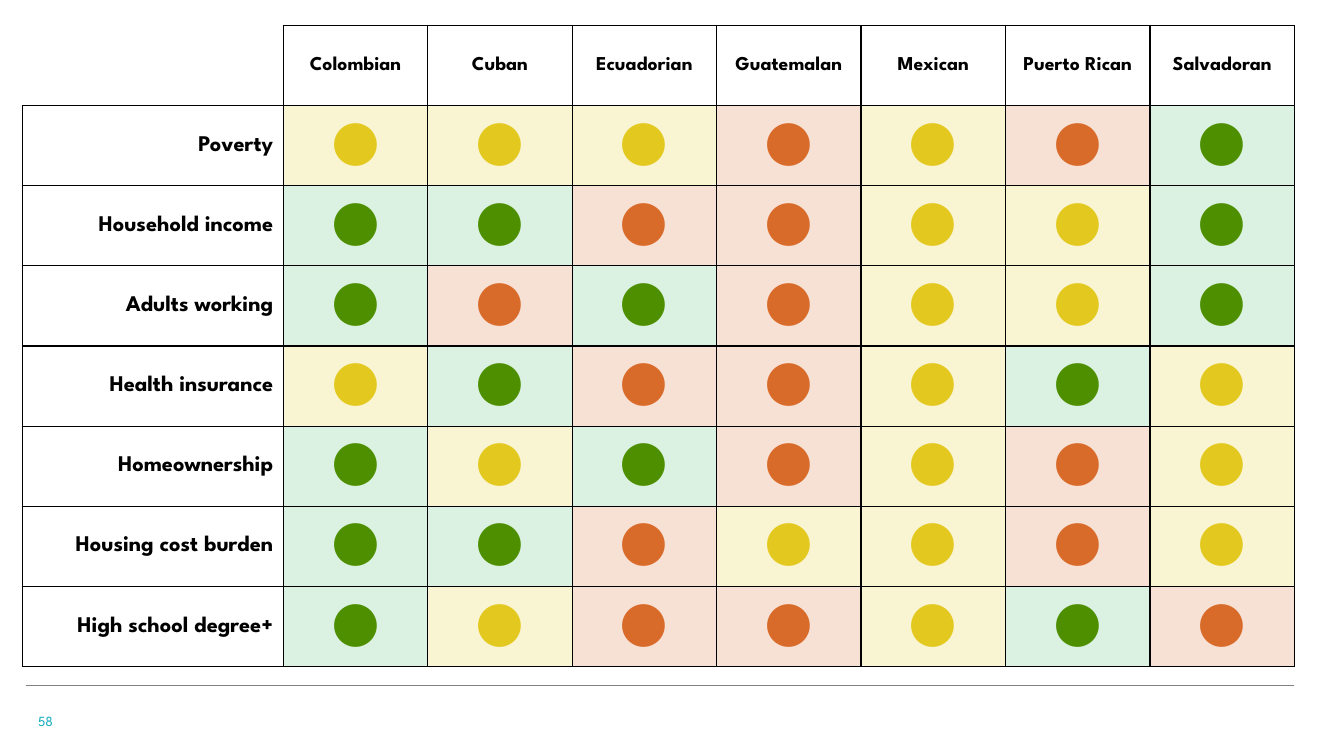
import dataclasses
import typing

import lxml.etree
import pptx
import pptx.dml.color
import pptx.enum.shapes
import pptx.enum.text
import pptx.oxml.ns
import pptx.util
from pptx.util import Cm

ALIGN = pptx.enum.text.PP_ALIGN
MIDDLE = pptx.enum.text.MSO_ANCHOR.MIDDLE


@dataclasses.dataclass(frozen=True)
class Theme:
    font: str = "League Spartan"
    ink: str = "000000"
    rule: str = "808080"
    page_number: str = "0FACBD"
    number_size: float = 10
    group_size: float = 14
    measure_size: float = 16
    dot_size: float = 40
    border_width: float = 1
    rule_width: float = 0.5


class Rating(typing.NamedTuple):
    dot: str
    fill: str


class Measure(typing.NamedTuple):
    name: str
    ratings: str


THEME = Theme()
RATINGS = {
    "G": Rating("4E8F00", "DBF1E2"),
    "Y": Rating("E3C91F", "F9F4D2"),
    "R": Rating("D96B2A", "F7E1D4"),
}
GROUPS = ["Colombian", "Cuban", "Ecuadorian", "Guatemalan", "Mexican",
          "Puerto Rican", "Salvadoran"]
MEASURES = [
    Measure("Poverty", "YYYRYRG"),
    Measure("Household income", "GGRRYYG"),
    Measure("Adults working", "GRGRYYG"),
    Measure("Health insurance", "YGRRYGY"),
    Measure("Homeownership", "GYGRYRY"),
    Measure("Housing cost burden", "GGRYYRY"),
    Measure("High school degree+", "GYRRYGR"),
]
MEASURE_WIDTH, GROUP_WIDTH, ROW_HEIGHT = Cm(6.58), Cm(3.64), Cm(2.02)


def rgb(value: str) -> pptx.dml.color.RGBColor:
    return pptx.dml.color.RGBColor.from_string(value)


def write(frame, text: str, size: float, color: str, bold: bool, align) -> None:
    para = frame.paragraphs[0]
    para.text = text
    para.alignment = align
    para.font.name = THEME.font
    para.font.size = pptx.util.Pt(size)
    para.font.bold = bold
    para.font.color.rgb = rgb(color)


def format_cell(cell, fill: str | None = None, hidden_sides: str = "") -> None:
    qn = pptx.oxml.ns.qn
    properties = cell._tc.get_or_add_tcPr()
    for side in "LRTB":
        line = lxml.etree.SubElement(properties, qn(f"a:ln{side}"))
        if side in hidden_sides:
            lxml.etree.SubElement(line, qn("a:noFill"))
            continue
        line.set("w", str(pptx.util.Pt(THEME.border_width)))
        solid = lxml.etree.SubElement(line, qn("a:solidFill"))
        lxml.etree.SubElement(solid, qn("a:srgbClr"), val=THEME.ink)
    if fill:
        cell.fill.solid()
        cell.fill.fore_color.rgb = rgb(fill)
    else:
        cell.fill.background()
    cell.vertical_anchor = MIDDLE
    cell.margin_top = cell.margin_bottom = 0


def draw_ratings(page) -> None:
    row_count, column_count = len(MEASURES) + 1, len(GROUPS) + 1
    table = page.shapes.add_table(
        row_count, column_count, Cm(0.56), Cm(0.64),
        MEASURE_WIDTH + GROUP_WIDTH * len(GROUPS), ROW_HEIGHT * row_count).table
    table.first_row = table.horz_banding = False
    for index, column in enumerate(table.columns):
        column.width = GROUP_WIDTH if index else MEASURE_WIDTH
    for row in table.rows:
        row.height = ROW_HEIGHT

    format_cell(table.cell(0, 0), hidden_sides="LT")
    for column, group in enumerate(GROUPS, 1):
        cell = table.cell(0, column)
        format_cell(cell)
        write(cell.text_frame, group, THEME.group_size, THEME.ink, True, ALIGN.CENTER)
    for row, measure in enumerate(MEASURES, 1):
        cell = table.cell(row, 0)
        format_cell(cell)
        write(cell.text_frame, measure.name, THEME.measure_size, THEME.ink, True, ALIGN.RIGHT)
        for column, key in enumerate(measure.ratings, 1):
            cell, rating = table.cell(row, column), RATINGS[key]
            format_cell(cell, rating.fill)
            write(cell.text_frame, "●", THEME.dot_size, rating.dot, False, ALIGN.CENTER)


def draw_footer(page) -> None:
    rule = page.shapes.add_connector(
        pptx.enum.shapes.MSO_CONNECTOR.STRAIGHT,
        Cm(0.66), Cm(17.27), Cm(32.61), Cm(17.27))
    rule.line.color.rgb = rgb(THEME.rule)
    rule.line.width = pptx.util.Pt(THEME.rule_width)
    lxml.etree.SubElement(rule._element.spPr, pptx.oxml.ns.qn("a:effectLst"))
    box = page.shapes.add_textbox(Cm(0.71), Cm(17.65), Cm(7.62), Cm(1.02))
    box.text_frame.word_wrap = True
    box.text_frame.vertical_anchor = MIDDLE
    write(box.text_frame, "58", THEME.number_size, THEME.page_number, False, ALIGN.LEFT)


def main() -> None:
    deck = pptx.Presentation()
    deck.slide_width, deck.slide_height = Cm(33.87), Cm(19.05)
    page = deck.slides.add_slide(deck.slide_layouts[6])
    draw_footer(page)
    draw_ratings(page)
    deck.save("out.pptx")


if __name__ == "__main__":
    main()
